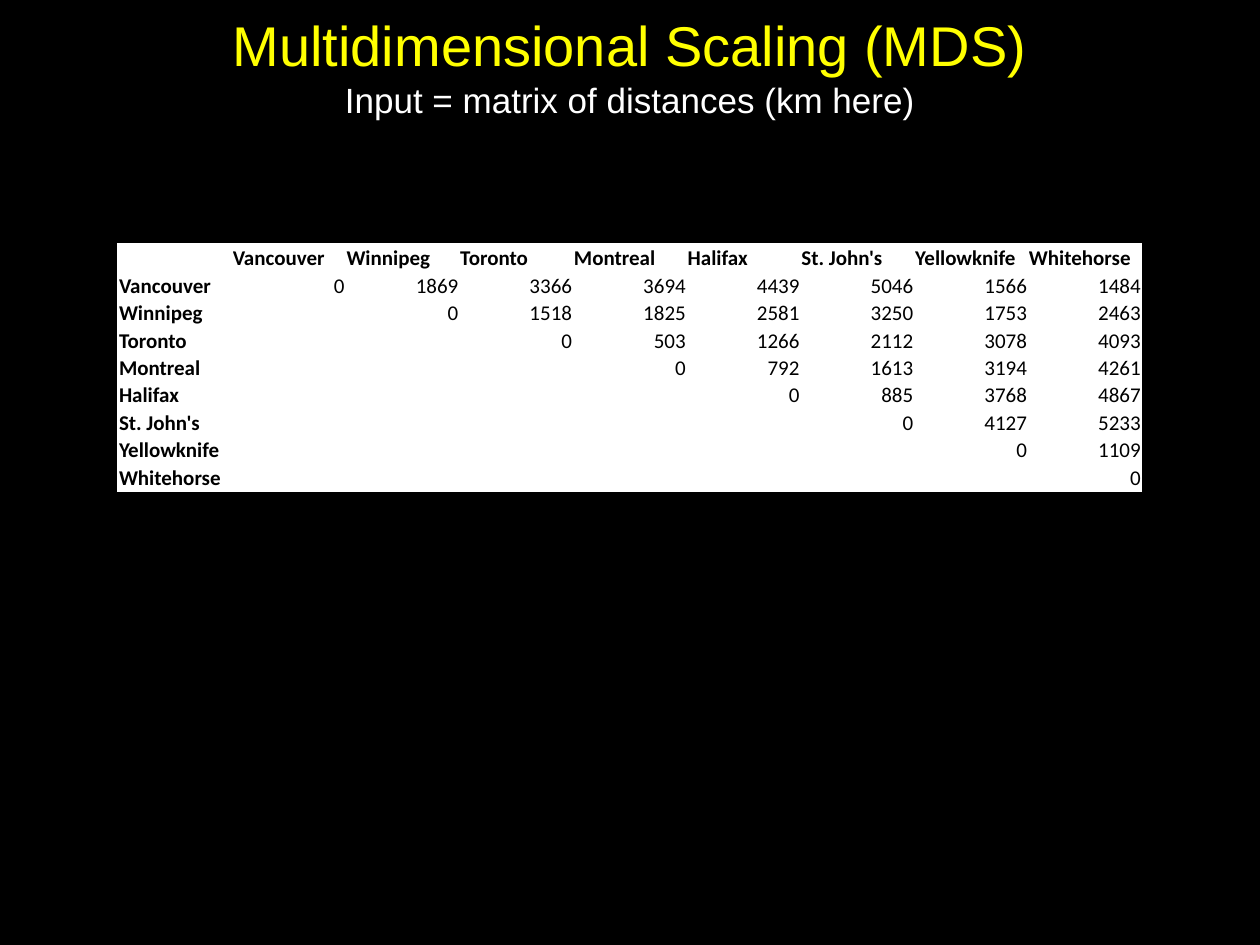
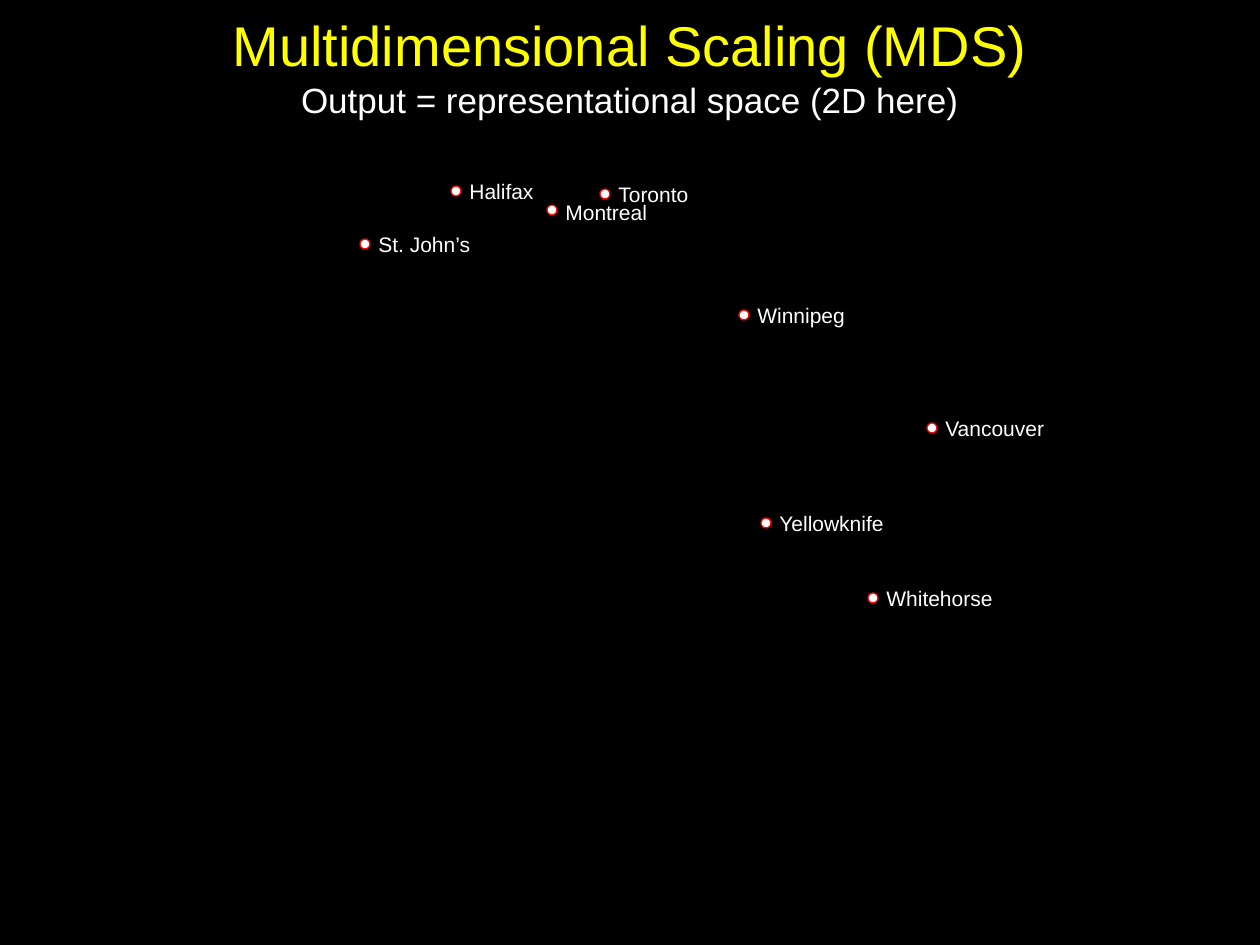
from dataclasses import dataclass

from lxml import etree
from pptx import Presentation
from pptx.dml.color import RGBColor
from pptx.enum.shapes import MSO_SHAPE
from pptx.enum.text import MSO_ANCHOR, PP_ALIGN
from pptx.oxml.ns import qn
from pptx.util import Emu, Pt

LEFT, CENTER, RIGHT = PP_ALIGN.LEFT, PP_ALIGN.CENTER, PP_ALIGN.RIGHT
MIDDLE, BOTTOM = MSO_ANCHOR.MIDDLE, MSO_ANCHOR.BOTTOM
OVAL = MSO_SHAPE.OVAL

TITLE = "Multidimensional Scaling (MDS)"
INPUT_SUBTITLE = "Input = matrix of distances (km here)"
OUTPUT_SUBTITLE = "Output = representational space (2D here)"

CITIES = ["Vancouver", "Winnipeg", "Toronto", "Montreal",
          "Halifax", "St. John's", "Yellowknife", "Whitehorse"]
# Upper triangle: each row starts at the city's own column.
DISTANCES = [
    [0, 1869, 3366, 3694, 4439, 5046, 1566, 1484],
    [0, 1518, 1825, 2581, 3250, 1753, 2463],
    [0, 503, 1266, 2112, 3078, 4093],
    [0, 792, 1613, 3194, 4261],
    [0, 885, 3768, 4867],
    [0, 4127, 5233],
    [0, 1109],
    [0],
]
# City, dot centre x and y, label width, label shift down
MAP_POINTS = [
    ("Vancouver", 932, 428, 129, 0),
    ("Winnipeg", 744, 315, 115, 0),
    ("Toronto", 605, 194, 117, 0),
    ("Halifax", 456, 191, 117, 0),
    ("St. John’s", 365, 244, 117, 0),
    ("Whitehorse", 873, 598, 134, 0),
    ("Yellowknife", 766, 523, 133, 0),
    ("Montreal", 552, 210, 117, 2),
]

PAGE_SIZE = (1260, 945)
TITLE_AREA = (63, 4, 1134, 123)
TABLE_AREA = (118, 244, 1024, 247)
DOT_SIZE, LABEL_HEIGHT = 10, 38


@dataclass(frozen=True)
class Theme:
    black: RGBColor = RGBColor(0x00, 0x00, 0x00)
    white: RGBColor = RGBColor(0xFF, 0xFF, 0xFF)
    yellow: RGBColor = RGBColor(0xFF, 0xFF, 0x00)
    red: RGBColor = RGBColor(0xFF, 0x00, 0x00)
    title_size: int = 32
    subtitle_size: int = 20
    body_size: int = 12
    outline: float = 0.75
    slide_font: str = "Arial"
    table_font: str = "Calibri"


THEME = Theme()


def px(*lengths):
    return [Emu(round(length * 914400 / 126)) for length in lengths]


def add_span(para, text, size, color, font=THEME.slide_font, bold=False):
    span = para.add_run()
    span.text = text
    span.font.color.rgb = color
    for name, value in {"size": Pt(size), "name": font, "bold": bold}.items():
        setattr(span.font, name, value)


def add_box(page, area):
    frame = page.shapes.add_textbox(*px(*area)).text_frame
    frame.word_wrap = True
    return frame


def add_page(deck, subtitle):
    """Add a black slide with the shared title and its own subtitle."""
    page = deck.slides.add_slide(deck.slide_layouts[6])
    page.background.fill.solid()
    page.background.fill.fore_color.rgb = THEME.black
    frame = add_box(page, TITLE_AREA)
    frame.vertical_anchor = MIDDLE
    para = frame.paragraphs[0]
    para.alignment = CENTER
    add_span(para, TITLE, THEME.title_size, THEME.yellow)
    para.add_line_break()
    add_span(para, subtitle, THEME.subtitle_size, THEME.white)
    return page


def fill_cell(cell, text, is_heading):
    cell.fill.solid()
    cell.fill.fore_color.rgb = THEME.white
    edge, none = px(1, 0)
    form = {"vertical_anchor": BOTTOM, "margin_left": edge, "margin_right": edge,
            "margin_top": edge, "margin_bottom": none}
    for name, value in form.items():
        setattr(cell, name, value)
    para = cell.text_frame.paragraphs[0]
    para.alignment = LEFT if is_heading else RIGHT
    if text:
        add_span(para, text, THEME.body_size, THEME.black, THEME.table_font, is_heading)
    else:  # keeps empty cells from stretching their row
        etree.SubElement(para._p, qn("a:endParaRPr"), sz=str(THEME.body_size * 100))


def add_distance_table(page):
    rows = [[""] + CITIES]
    for index, (city, distances) in enumerate(zip(CITIES, DISTANCES)):
        rows.append([city] + [""] * index + [str(km) for km in distances])
    count = len(rows)
    table = page.shapes.add_table(count, count, *px(*TABLE_AREA)).table
    table.first_row = table.horz_banding = False
    column_width, row_height = px(TABLE_AREA[2] / count, TABLE_AREA[3] / count)
    for column in table.columns:
        column.width = column_width
    for row_index, texts in enumerate(rows):
        table.rows[row_index].height = row_height
        for column_index, text in enumerate(texts):
            is_heading = row_index == 0 or column_index == 0
            fill_cell(table.cell(row_index, column_index), text, is_heading)


def add_city(page, city, x, y, label_width, shift):
    corner = (x - DOT_SIZE / 2, y - DOT_SIZE / 2)
    dot = page.shapes.add_shape(OVAL, *px(*corner, DOT_SIZE, DOT_SIZE))
    dot.shadow.inherit = False
    dot.fill.solid()
    dot.fill.fore_color.rgb = THEME.white
    dot.line.color.rgb = THEME.red
    dot.line.width = Pt(THEME.outline)
    top = y - LABEL_HEIGHT / 2 + shift
    label = add_box(page, (x + 1, top, label_width, LABEL_HEIGHT))
    add_span(label.paragraphs[0], city, THEME.body_size, THEME.white)


def main():
    deck = Presentation()
    deck.slide_width, deck.slide_height = px(*PAGE_SIZE)
    add_distance_table(add_page(deck, INPUT_SUBTITLE))
    map_page = add_page(deck, OUTPUT_SUBTITLE)
    for point in MAP_POINTS:
        add_city(map_page, *point)
    deck.save("out.pptx")


if __name__ == "__main__":
    main()
